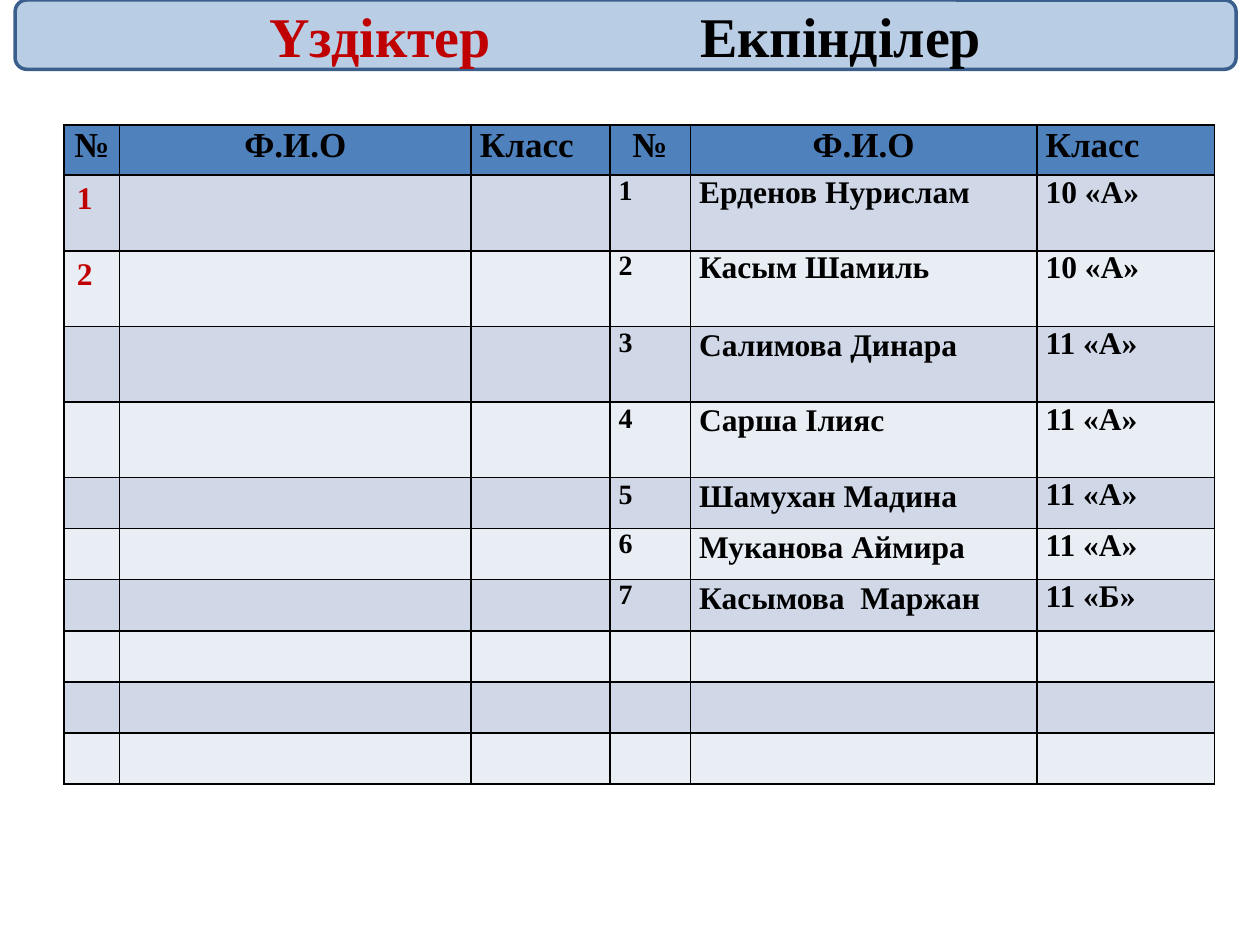
from pptx import Presentation
from pptx.dml.color import RGBColor
from pptx.enum.shapes import MSO_SHAPE
from pptx.enum.text import MSO_ANCHOR, PP_ALIGN
from pptx.oxml import parse_xml
from pptx.oxml.ns import nsdecls
from pptx.util import Inches, Pt

BLACK = RGBColor(0x00, 0x00, 0x00)
RED = RGBColor(0xC0, 0x00, 0x00)
BANNER_FILL = RGBColor(0xB9, 0xCD, 0xE5)
BANNER_LINE = RGBColor(0x3A, 0x5F, 0x8C)
HEADER_FILL = RGBColor(0x4F, 0x81, 0xBD)
BANDS = (RGBColor(0xD0, 0xD8, 0xE8), RGBColor(0xE9, 0xED, 0xF4))

HEADINGS = ("№", "Ф.И.О", "Класс") * 2
COLUMN_WIDTHS = (4.4, 27.9, 11, 6.4, 27.5, 14.1)
ROW_HEIGHTS = (4,) + (6,) * 4 + (4,) * 6
STUDENTS = (
    ("Ерденов Нурислам", "10 «А»"),
    ("Касым Шамиль", "10 «А»"),
    ("Салимова Динара", "11 «А»"),
    ("Сарша Ілияс", "11 «А»"),
    ("Шамухан Мадина", "11 «А»"),
    ("Муканова Аймира", "11 «А»"),
    ("Касымова  Маржан", "11 «Б»"),
)


class HonourSlide:
    """Holds the style and the slide; lengths are in columns and rows of a grid."""

    FONT = "Times New Roman"
    COLUMNS, ROWS = 100, 75

    def __init__(self, presentation):
        self.column = presentation.slide_width / self.COLUMNS
        self.row = presentation.slide_height / self.ROWS
        self.slide = presentation.slides.add_slide(presentation.slide_layouts[6])

    def x(self, columns):
        return round(columns * self.column)

    def y(self, rows):
        return round(rows * self.row)

    def box(self, left, top, width, height):
        return self.x(left), self.y(top), self.x(width), self.y(height)

    def add_run(self, paragraph, text, size, color=BLACK):
        run = paragraph.add_run()
        run.text = text
        run.font.name = self.FONT
        run.font.size = Pt(size)
        run.font.bold = True
        run.font.color.rgb = color

    def banner(self, place, parts, text_start, tab, size):
        banner = self.slide.shapes.add_shape(MSO_SHAPE.ROUNDED_RECTANGLE, *self.box(*place))
        banner.shadow.inherit = False
        banner.fill.solid()
        banner.fill.fore_color.rgb = BANNER_FILL
        banner.line.color.rgb = BANNER_LINE
        banner.line.width = Pt(2)
        frame = banner.text_frame
        frame.word_wrap = True
        frame.vertical_anchor = MSO_ANCHOR.MIDDLE
        frame.margin_left = self.x(text_start)
        title = frame.paragraphs[0]
        title.alignment = PP_ALIGN.LEFT
        # A tab stop lines up the second heading
        title._p.get_or_add_pPr().append(parse_xml(
            f'<a:tabLst {nsdecls("a")}><a:tab pos="{self.x(tab)}" algn="l"/></a:tabLst>'))
        for text, color in parts:
            self.add_run(title, text, size, color)

    def table(self, left, top, widths, heights):
        place = self.box(left, top, sum(widths), sum(heights))
        table = self.slide.shapes.add_table(len(heights), len(widths), *place).table
        for column, width in zip(table.columns, widths):
            column.width = self.x(width)
        for index, (row, height) in enumerate(zip(table.rows, heights)):
            row.height = self.y(height)
            for cell in row.cells:
                cell.fill.solid()
                cell.fill.fore_color.rgb = BANDS[(index - 1) % 2] if index else HEADER_FILL
                self.borders(cell)
        return table

    def borders(self, cell):
        properties = cell._tc.get_or_add_tcPr()
        for position, side in enumerate("LRTB"):
            properties.insert(position, parse_xml(
                f'<a:ln{side} {nsdecls("a")} w="{Pt(1)}"><a:solidFill>'
                f'<a:srgbClr val="{BLACK}"/></a:solidFill></a:ln{side}>'))

    def cell_text(self, cell, text, size=18, color=BLACK, align=PP_ALIGN.LEFT,
                  spacing=None, tight=True):
        if tight:
            cell.margin_left = cell.margin_right = self.x(0.7)
            cell.margin_top = cell.margin_bottom = 0
        paragraph = cell.text_frame.paragraphs[0]
        paragraph.alignment = align
        paragraph.line_spacing = spacing
        self.add_run(paragraph, text, size, color)


def main():
    presentation = Presentation()
    presentation.slide_width, presentation.slide_height = Inches(10), Inches(7.5)
    page = HonourSlide(presentation)

    # Title banner
    page.banner((1.2, 0, 96.9, 5.5), (("Үздіктер\t", RED), ("Екпінділер", BLACK)),
                text_start=19.9, tab=34.2, size=32)

    # Table and its header row
    honours = page.table(5.1, 9.9, COLUMN_WIDTHS, ROW_HEIGHTS)
    for column, heading in enumerate(HEADINGS):
        align = PP_ALIGN.LEFT if heading == "Класс" else PP_ALIGN.CENTER
        page.cell_text(honours.cell(0, column), heading, 20, align=align, spacing=1.05)

    # Numbers of the left list
    for number in (1, 2):
        page.cell_text(honours.cell(number, 0), str(number), color=RED, tight=False)

    # Right list of students
    for number, (student, grade) in enumerate(STUDENTS, 1):
        page.cell_text(honours.cell(number, 3), str(number), 16,
                       spacing=1.05 if 3 <= number <= 5 else None)
        page.cell_text(honours.cell(number, 4), student,
                       spacing=1.05 if number >= 3 else None)
        page.cell_text(honours.cell(number, 5), grade)

    presentation.save("out.pptx")


if __name__ == "__main__":
    main()
